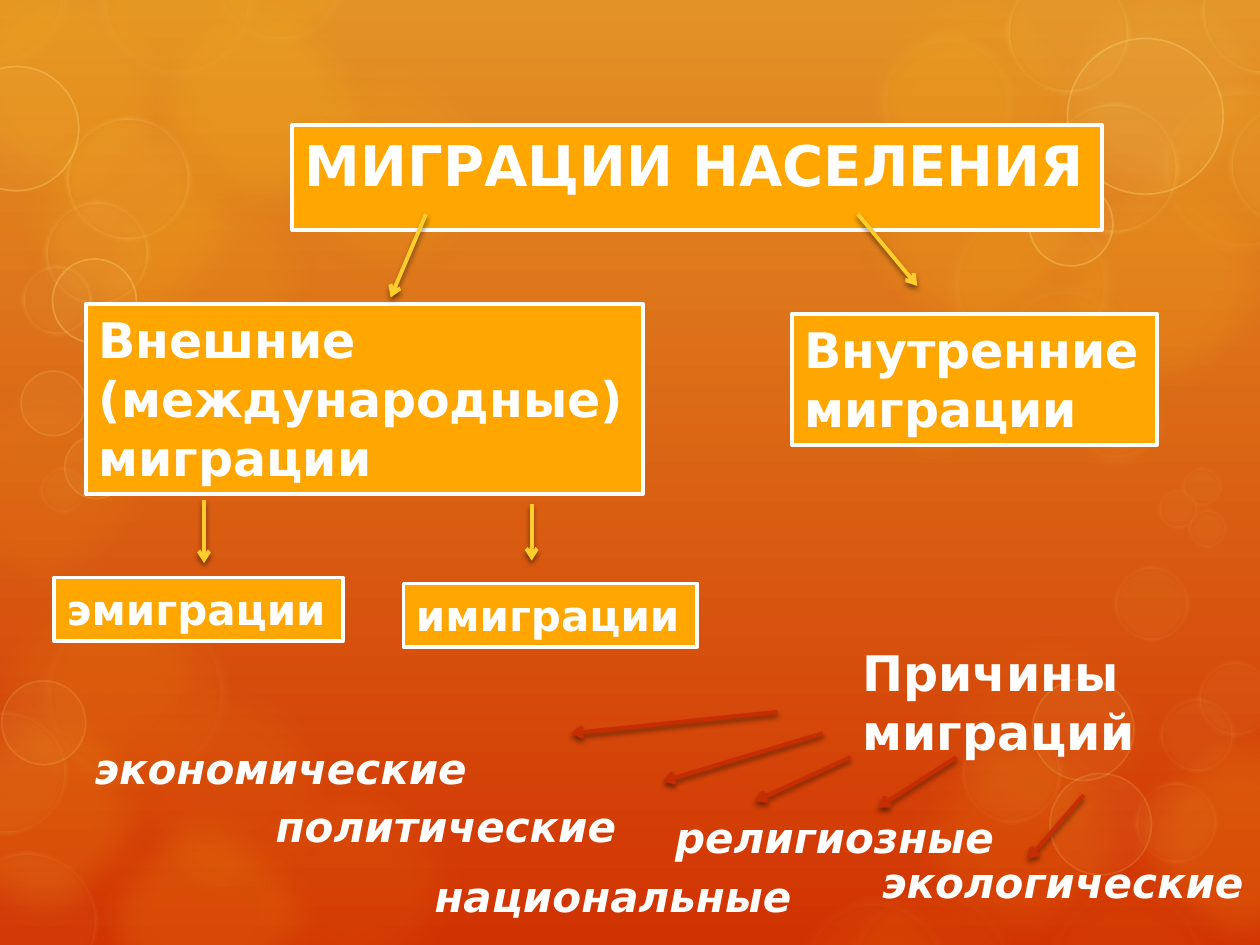
from pptx import Presentation
from pptx.dml.color import RGBColor
from pptx.enum.shapes import MSO_CONNECTOR as Connector, MSO_SHAPE as Shape
from pptx.enum.text import MSO_ANCHOR as Anchor, MSO_AUTO_SIZE as AutoSize, PP_ALIGN as Align
from pptx.oxml import parse_xml
from pptx.oxml.ns import nsdecls, qn
from pptx.util import Pt

FONT = "DejaVu Sans"
COLORS = {
    "sky": "E39325", "ground": "D13202", "glow": "FDC61B", "pale": "FFE281",
    "haze": "FEEBAE", "box": "FFA600", "white": "FFFFFF",
    "yellow": "FFCE2D", "red": "C62D03",
}

# Soft glows of one size: left, top, opacity in percent
GLOW_SIZE = 150.5
GLOWS = [
    (-18, 318, 8), (41, 86, 10), (148, 22, 10), (41, 451, 16), (-40, -23, 14),
    (73, -13, 20), (0, 52, 15), (482, -21, 10), (590, 86, 15),
    (634, 405, 16), (525, 343, 5), (-50, 390, 16), (55, 377, 8), (482, 62, 15),
    (508, 405, 10), (125, 429, 8), (-50, 203, 8),
]

# Style: fill, fill opacity, line, line width, line opacity, soft edge
# Bubbles: left, top, diameter
BUBBLES = [
    (("pale", 10, None, 0, 0, 20), [(590, -23, GLOW_SIZE)]),
    (("glow", 10, None, 0, 0, 20), [(486, 189, 96)]),
    (("glow", 10, "haze", 14, 6, 10), [
        (661, 47, 99), (500, 17, 82), (541, 114, 96), (568, 161, 82),
        (610, 210, 57), (54, -47, 94), (118, -54, 82), (-41, -42, 82)]),
    (("glow", 6, "haze", 14, 4, 10), [
        (22, 341, 110), (455, 511, 90), (482, 505, 99), (596, 505, 96)]),
    (("pale", 5, "pale", 5, 15, 4), [
        (-25, 486, 81), (-32, 406, 71), (549, 413, 58), (648, 446, 48),
        (636, 323, 44), (662, 398, 44), (684, 377, 44), (675, 266, 24),
        (661, 279, 24), (678, 290, 24), (22, 266, 28)]),
    (("pale", 5, "pale", 5, 30, 4), [
        (37, 66, 72), (25, 114, 61), (12, 151, 41), (575, -17, 71),
        (686, -29, 72), (702, 59, 71), (598, 58, 76)]),
    (("pale", 5, "pale", 1, 15, 0), [
        (1, 389, 48), (600, 442, 58), (590, 388, 58), (12, 212, 37), (37, 249, 36)]),
    (("pale", 5, "pale", 1, 30, 0), [
        (-26, 38, 71), (30, 148, 48), (610, 22, 89), (588, 104, 48)]),
]

TITLE = (["МИГРАЦИИ НАСЕЛЕНИЯ"], 32, (167, 71.2, 462.5, 46))
BOXES = [
    (["Внешние", "(международные)", "миграции"], 28, (49.3, 173.5, 317.9, 108.9)),
    (["Внутренние", "миграции"], 28, (452.6, 179.2, 208.4, 75)),
    (["эмиграции"], 24, (31, 330, 165, 36.3)),
    (["имиграции"], 24, (230.6, 333.4, 167.8, 36.3)),
]
CAUSES_HEADING = (["Причины миграций"], 28, (485.8, 363.6, 208.4, 75))
CAUSES = [
    (["экономические"], 24, (46.8, 420.5, 243.4, 36.3)),
    (["политические"], 24, (150.5, 453.6, 211, 36.3)),
    (["национальные"], 24, (241.2, 494, 222.5, 36.3)),
    (["религиозные"], 24, (378.7, 460.1, 199.4, 36.3)),
    (["экологические"], 24, (496.8, 486, 223.2, 36.3)),
]

# Start x, start y, end x, end y
ARROWS = {
    "yellow": [
        (490.3, 122.4, 524.2, 163.4), (243.4, 122.4, 223.2, 170),
        (303.8, 288, 303.8, 320.4), (116.6, 285.8, 116.6, 321.8)],
    "red": [
        (444.2, 406.8, 326.2, 419), (486, 432.7, 431.3, 457.9),
        (470.2, 419, 378.7, 446.4), (546.5, 432.7, 501.8, 461.5),
        (619.2, 454.3, 587.5, 491)],
}


def color(name):
    return RGBColor.from_string(COLORS[name])


def add_effect(shape, effect=""):
    shape.element.spPr.append(
        parse_xml(f'<a:effectLst {nsdecls("a")}>{effect}</a:effectLst>'))


def add_bubble(shapes, left, top, size, style):
    fill, fill_opacity, line, width, line_opacity, soft_edge = style
    bubble = shapes.add_shape(Shape.OVAL, Pt(left), Pt(top), Pt(size), Pt(size))
    bubble.fill.solid()
    bubble.fill.fore_color.rgb = color(fill)
    if line:
        bubble.line.color.rgb = color(line)
        bubble.line.width = Pt(width)
    else:
        bubble.line.fill.background()
    paints = bubble.element.spPr.iter(qn("a:srgbClr"))
    for paint, opacity in zip(paints, (fill_opacity, line_opacity)):
        paint.append(parse_xml(f'<a:alpha {nsdecls("a")} val="{opacity * 1000}"/>'))
    add_effect(bubble, f'<a:softEdge rad="{Pt(soft_edge)}"/>' if soft_edge else "")


def write(shape, lines, size, italic=False, wrap=False):
    frame = shape.text_frame
    frame.text = "\n".join(lines)
    frame.word_wrap = wrap
    frame.auto_size = AutoSize.SHAPE_TO_FIT_TEXT
    frame.vertical_anchor = Anchor.TOP
    for paragraph in frame.paragraphs:
        paragraph.alignment = Align.LEFT
        font = paragraph.font
        font.name, font.size = FONT, Pt(size)
        font.bold, font.italic = True, italic
        font.color.rgb = color("white")


def format_box(shape, lines, size):
    shape.fill.solid()
    shape.fill.fore_color.rgb = color("box")
    shape.line.color.rgb = color("white")
    shape.line.width = Pt(2.25)
    write(shape, lines, size)


def add_arrow(shapes, ends, line_color):
    arrow = shapes.add_connector(Connector.STRAIGHT, *map(Pt, ends))
    arrow.line.color.rgb = color(line_color)
    arrow.line.width = Pt(2.25)
    arrow.line._get_or_add_ln().append(
        parse_xml(f'<a:tailEnd {nsdecls("a")} type="arrow"/>'))
    add_effect(arrow, f'<a:outerShdw blurRad="{Pt(3)}" dist="{Pt(2)}" dir="5400000" '
                      'rotWithShape="0"><a:srgbClr val="000000"><a:alpha val="45000"/>'
                      '</a:srgbClr></a:outerShdw>')


def main():
    presentation = Presentation()
    presentation.slide_width, presentation.slide_height = Pt(720), Pt(540)
    slide = presentation.slides.add_slide(presentation.slide_layouts[5])
    shapes = slide.shapes

    background = slide.background.fill
    background.gradient()
    background.gradient_angle = 270
    for stop, name, position in zip(background.gradient_stops, ("sky", "ground"), (0, 1)):
        stop.color.rgb = color(name)
        stop.position = position

    for left, top, opacity in GLOWS:
        add_bubble(shapes, left, top, GLOW_SIZE, ("glow", opacity, None, 0, 0, 20))
    for style, bubbles in BUBBLES:
        for bubble in bubbles:
            add_bubble(shapes, *bubble, style)

    lines, size, place = TITLE
    title = shapes.title
    title.left, title.top, title.width, title.height = map(Pt, place)
    format_box(title, lines, size)
    title.element.getparent().append(title.element)  # in front of the bubbles

    for lines, size, place in BOXES:
        box = shapes.add_shape(Shape.RECTANGLE, *map(Pt, place))
        box.shadow.inherit = False
        format_box(box, lines, size)

    lines, size, place = CAUSES_HEADING
    write(shapes.add_textbox(*map(Pt, place)), lines, size, wrap=True)
    for lines, size, place in CAUSES:
        write(shapes.add_textbox(*map(Pt, place)), lines, size, italic=True)

    for line_color, arrows in ARROWS.items():
        for ends in arrows:
            add_arrow(shapes, ends, line_color)

    presentation.save("out.pptx")


if __name__ == "__main__":
    main()
